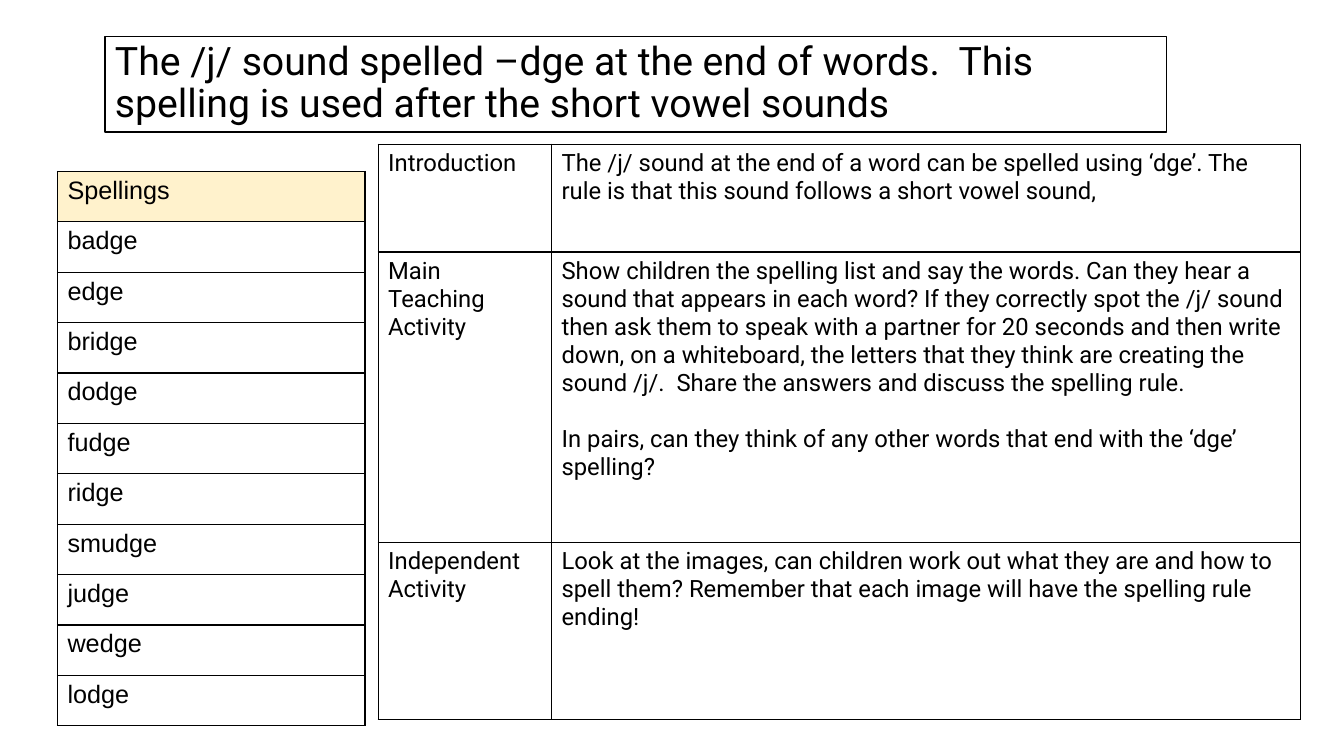
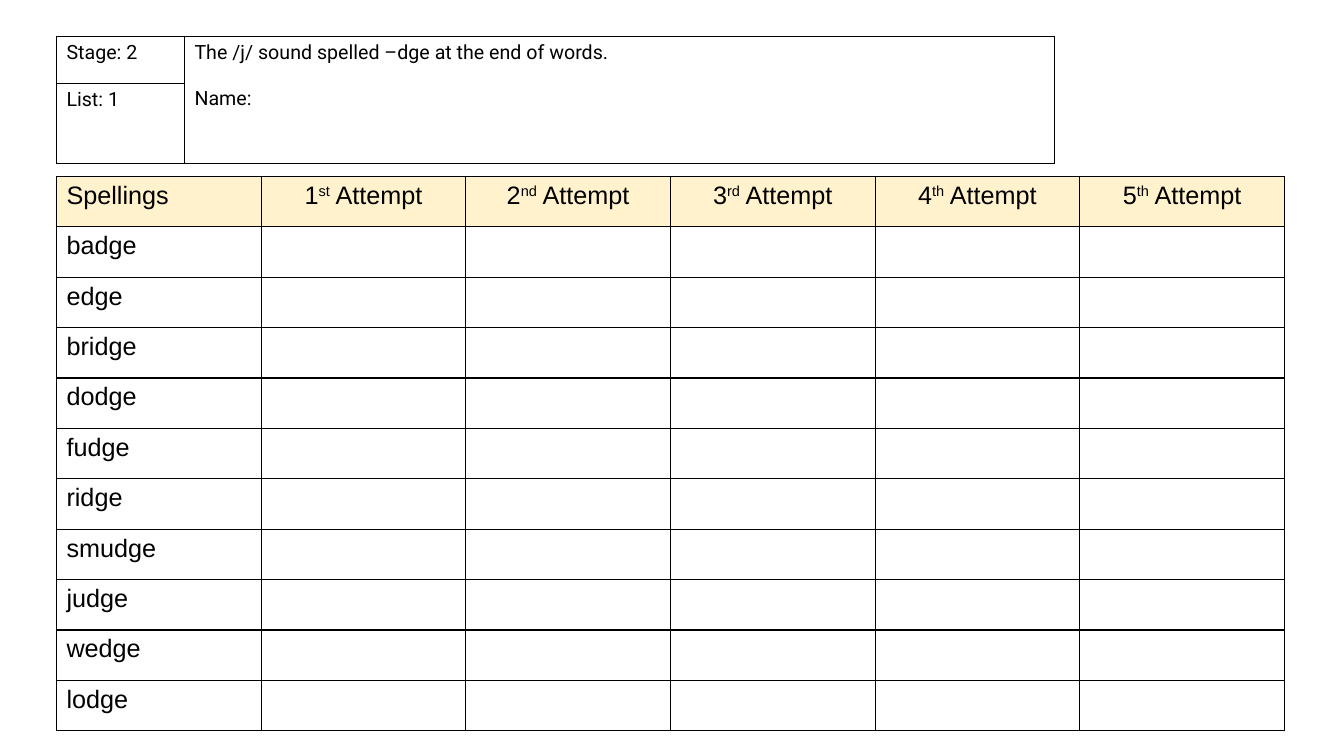
from dataclasses import dataclass

from pptx import Presentation
from pptx.dml.color import RGBColor
from pptx.enum import text
from pptx.oxml import parse_xml
from pptx.oxml.ns import nsdecls
from pptx.util import Inches, Pt


@dataclass(frozen=True)
class Theme:
    ink: str = "000000"
    paper: str = "FFFFFF"
    header: str = "FFF2CC"
    lesson_font: str = "Roboto"
    list_font: str = "Arial"
    title_size: int = 28
    list_size: int = 18
    plan_size: int = 17
    label_size: int = 14
    line_width: int = 1


THEME = Theme()
TITLE_ONLY, BLANK = 5, 6
ROW_HEIGHT = 0.5
WORDS = ["badge", "edge", "bridge", "dodge", "fudge",
         "ridge", "smudge", "judge", "wedge", "lodge"]
RULE = "The /j/ sound spelled –dge at the end of words."
PLAN = [
    ("Introduction",
     "The /j/ sound at the end of a word can be spelled using ‘dge’. "
     "The rule is that this sound follows a short vowel sound,"),
    ("Main Teaching Activity",
     "Show children the spelling list and say the words. Can they hear a sound "
     "that appears in each word? If they correctly spot the /j/ sound then ask "
     "them to speak with a partner for 20 seconds and then write down, on a "
     "whiteboard, the letters that they think are creating the sound /j/.  "
     "Share the answers and discuss the spelling rule.\n"
     "In pairs, can they think of any other words that end with the ‘dge’ spelling?"),
    ("Independent Activity",
     "Look at the images, can children work out what they are and how to spell "
     "them? Remember that each image will have the spelling rule ending!"),
]


def rgb(value):
    return RGBColor.from_string(value)


def style_font(font, name, size):
    font.name = name
    font.size = Pt(size)
    font.color.rgb = rgb(THEME.ink)


def add_borders(cell):
    properties = cell._tc.get_or_add_tcPr()
    for side in "LRTB":
        properties.append(parse_xml(
            f'<a:ln{side} {nsdecls("a")} w="{Pt(THEME.line_width)}"><a:solidFill>'
            f'<a:srgbClr val="{THEME.ink}"/></a:solidFill></a:ln{side}>'))


def add_grid(slide, left, top, column_widths, row_heights, rows, font, size, gap=0):
    """Add a bordered table; gap is the space in points between paragraphs."""
    table = slide.shapes.add_table(
        len(row_heights), len(column_widths), Inches(left), Inches(top),
        Inches(sum(column_widths)), Inches(sum(row_heights))).table
    table.first_row = table.horz_banding = False
    for column, width in zip(table.columns, column_widths):
        column.width = Inches(width)
    for row, height, values in zip(table.rows, row_heights, rows):
        row.height = Inches(height)
        for cell, value in zip(row.cells, values):
            add_borders(cell)
            cell.fill.background()
            cell.text_frame.text = value
            for index, paragraph in enumerate(cell.text_frame.paragraphs):
                style_font(paragraph.font, font, size)
                if index:
                    paragraph.space_before = Pt(gap)
                for run in paragraph.runs:
                    style_font(run.font, font, size)
    return table


def write_attempt(cell, number):
    """Write an ordinal heading with a raised suffix."""
    suffix = {1: "st", 2: "nd", 3: "rd"}.get(number, "th")
    paragraph = cell.text_frame.paragraphs[0]
    paragraph.alignment = text.PP_ALIGN.CENTER
    for part in (str(number), suffix, " Attempt"):
        run = paragraph.add_run()
        run.text = part
        style_font(run.font, THEME.list_font, THEME.list_size)
        if part == suffix:
            run._r.get_or_add_rPr().set("baseline", "30000")


def add_spelling_list(slide, left, top, column_width, attempts=0):
    blanks = [""] * attempts
    rows = [[word, *blanks] for word in ["Spellings", *WORDS]]
    table = add_grid(slide, left, top, [column_width] * (attempts + 1),
                     [ROW_HEIGHT] * len(rows), rows,
                     THEME.list_font, THEME.list_size)
    for number, cell in enumerate(table.rows[0].cells):
        cell.fill.solid()
        cell.fill.fore_color.rgb = rgb(THEME.header)
        if number:
            write_attempt(cell, number)


def set_title(slide, wording):
    title = slide.shapes.title
    title.left, title.top = Inches(1.04), Inches(0.36)
    title.width, title.height = Inches(10.53), Inches(0.95)
    title.fill.solid()
    title.fill.fore_color.rgb = rgb(THEME.paper)
    title.line.color.rgb = rgb(THEME.ink)
    title.line.width = Pt(THEME.line_width)
    frame = title.text_frame
    frame.text = wording
    frame.word_wrap = True
    frame.auto_size = text.MSO_AUTO_SIZE.NONE
    frame.vertical_anchor = text.MSO_ANCHOR.TOP
    paragraph = frame.paragraphs[0]
    paragraph.alignment = text.PP_ALIGN.LEFT
    paragraph.line_spacing = 0.9
    style_font(paragraph.runs[0].font, THEME.lesson_font, THEME.title_size)


def build_lesson_plan(presentation):
    slide = presentation.slides.add_slide(presentation.slide_layouts[TITLE_ONLY])
    set_title(slide, f"{RULE}  This spelling is used after the short vowel sounds")
    add_grid(slide, 3.75, 1.43, [1.72, 7.43], [1.07, 2.88, 1.76], PLAN,
             THEME.lesson_font, THEME.plan_size, gap=20)
    add_spelling_list(slide, 0.57, 1.7, 3.05)


def build_practice_sheet(presentation):
    slide = presentation.slides.add_slide(presentation.slide_layouts[BLANK])
    add_spelling_list(slide, 0.56, 1.75, 2.03, attempts=5)
    labels = add_grid(slide, 0.56, 0.36, [1.27, 8.63], [0.47, 0.47],
                      [("Stage: 2", f"{RULE}\nName:"), ("List: 1", "")],
                      THEME.lesson_font, THEME.label_size, gap=16.5)
    labels.cell(0, 1).merge(labels.cell(1, 1))


def main():
    presentation = Presentation()
    presentation.slide_width = Inches(13.33)
    presentation.slide_height = Inches(7.5)
    build_lesson_plan(presentation)
    build_practice_sheet(presentation)
    presentation.save("out.pptx")


if __name__ == "__main__":
    main()
